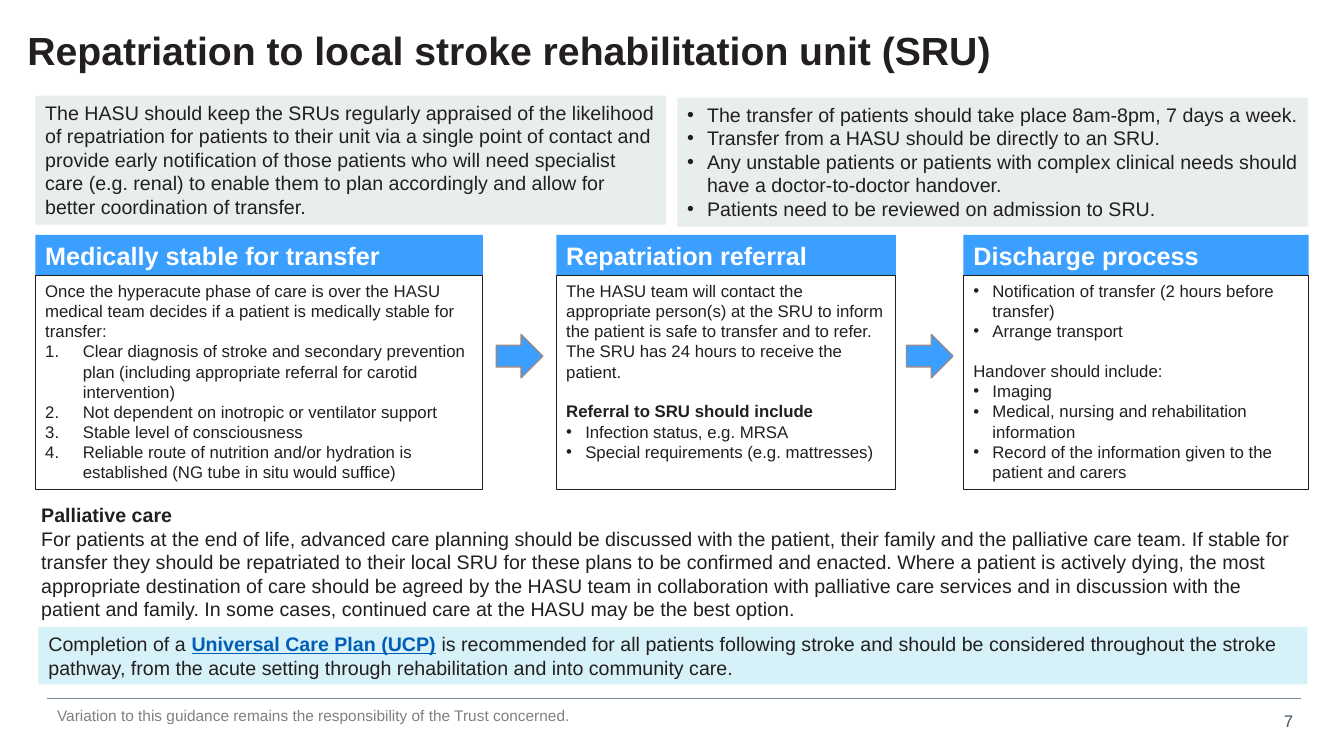
from dataclasses import dataclass

from lxml.etree import SubElement
from pptx import Presentation
from pptx.dml.color import RGBColor
from pptx.enum.shapes import MSO_CONNECTOR, MSO_SHAPE
from pptx.enum.text import MSO_ANCHOR, PP_ALIGN
from pptx.oxml.ns import qn
from pptx.util import Cm, Pt

COLORS = {
    "text": "231F20", "white": "FFFFFF", "blue": "3B9FFF", "outline": "97898D",
    "panel": "E8EDEE", "aqua": "D6F1F7", "link": "005EB8", "muted": "808080",
    "number": "425563", "rule": "768692",
}
BASE_FORMAT = {"name": "Arial", "size": 14, "bold": False, "color": "text"}
BULLET, NUMBER = "bullet", "number"


@dataclass
class Run:
    text: str
    format: dict


@dataclass
class Para:
    content: str | list[Run]
    marker: str = ""
    indent: float = 0.48
    bold: bool = False
    before: float = 0


@dataclass
class Block:
    left: float
    top: float
    width: float
    height: float
    paras: list[Para]
    format: dict
    fill: str = ""
    line: str = ""


@dataclass
class Stage:
    left: float
    width: float
    heading: str
    paras: list[Para]


def rgb(name: str) -> RGBColor:
    return RGBColor.from_string(COLORS[name])


def add_run(p, text: str, fmt: dict) -> None:
    r = p.add_run()
    r.text = text
    for key, value in fmt.items():
        if key == "color":
            r.font.color.rgb = rgb(value)
        else:
            setattr(r.font, key, Pt(value) if key == "size" else value)


def add_marker(p, marker: str, indent: float) -> None:
    """Give the paragraph a hanging bullet or number."""
    pPr = p._p.get_or_add_pPr()
    pPr.set("marL", str(Cm(indent)))
    pPr.set("indent", str(-Cm(indent)))
    SubElement(pPr, qn("a:buFont"), typeface="Arial")
    if marker == NUMBER:
        SubElement(pPr, qn("a:buAutoNum"), type="arabicPeriod")
    else:
        SubElement(pPr, qn("a:buChar"), char="•")


def style_shape(sp, fill: str, line: str, width: float = 0.75) -> None:
    sp.shadow.inherit = False
    if fill:
        sp.fill.solid()
        sp.fill.fore_color.rgb = rgb(fill)
    else:
        sp.fill.background()
    if line:
        sp.line.color.rgb = rgb(line)
        sp.line.width = Pt(width)
    else:
        sp.line.fill.background()


def add_block(s, block: Block):
    box = [Cm(v) for v in (block.left, block.top, block.width, block.height)]
    if block.fill or block.line:
        sp = s.shapes.add_shape(MSO_SHAPE.RECTANGLE, *box)
        style_shape(sp, block.fill, block.line)
    else:
        sp = s.shapes.add_textbox(*box)
    tf = sp.text_frame
    tf.word_wrap = True
    tf.vertical_anchor = MSO_ANCHOR.TOP
    for i, para in enumerate(block.paras):
        p = tf.add_paragraph() if i else tf.paragraphs[0]
        p.alignment = PP_ALIGN.LEFT
        if para.before:
            p.space_before = Pt(para.before)
        if para.marker:
            add_marker(p, para.marker, para.indent)
        fmt = BASE_FORMAT | block.format
        if para.bold:
            fmt["bold"] = True
        runs = [Run(para.content, {})] if isinstance(para.content, str) else para.content
        for run in runs:
            add_run(p, run.text, fmt | run.format)
    return sp


def add_arrow(s, center: float) -> None:
    width, height = 1.17, 1.09
    sp = s.shapes.add_shape(MSO_SHAPE.RIGHT_ARROW, Cm(center - width / 2), Cm(8.43),
                            Cm(width), Cm(height))
    style_shape(sp, "blue", "outline", 1)


def add_footer_rule(s) -> None:
    line = s.shapes.add_connector(MSO_CONNECTOR.STRAIGHT, Cm(1.19), Cm(17.6), Cm(32.79), Cm(17.6))
    line.line.color.rgb = rgb("rule")
    line.line.width = Pt(0.5)
    SubElement(line._element.spPr, qn("a:effectLst"))


def listed(marker: str, indent: float, *texts: str) -> list[Para]:
    return [Para(text, marker, indent) for text in texts]


TITLE = Block(0.69, 0.79, 31.67, 1.37,
              [Para("Repatriation to local stroke rehabilitation unit (SRU)")],
              {"size": 28, "bold": True})
PAGE_NUMBER = Block(31.8, 17.78, 1.04, 0.76, [Para("7")], {"size": 12, "color": "number"})

BLOCKS = [
    Block(0.89, 2.41, 15.9, 3.25, [Para(
        "The HASU should keep the SRUs regularly appraised of the likelihood of repatriation for "
        "patients to their unit via a single point of contact and provide early notification of "
        "those patients who will need specialist care (e.g. renal) to enable them to plan "
        "accordingly and allow for better coordination of transfer.")], {}, "panel"),
    Block(17.07, 2.46, 15.9, 3.25, listed(
        BULLET, 0.5,
        "The transfer of patients should take place 8am-8pm, 7 days a week.",
        "Transfer from a HASU should be directly to an SRU.",
        "Any unstable patients or patients with complex clinical needs should have a "
        "doctor-to-doctor handover.",
        "Patients need to be reviewed on admission to SRU."), {}, "panel"),
    Block(0.79, 12.55, 32.18, 3.25, [
        Para("Palliative care", bold=True),
        Para("For patients at the end of life, advanced care planning should be discussed with the "
             "patient, their family and the palliative care team. If stable for transfer they "
             "should be repatriated to their local SRU for these plans to be confirmed and enacted. "
             "Where a patient is actively dying, the most appropriate destination of care should be "
             "agreed by the HASU team in collaboration with palliative care services and in "
             "discussion with the patient and family. In some cases, continued care at the HASU may "
             "be the best option.")], {}),
    Block(0.97, 15.8, 31.98, 1.45, [Para([
        Run("Completion of a ", {}),
        Run("Universal Care Plan (UCP)", {"color": "link", "bold": True, "underline": True}),
        Run(" is recommended for all patients following stroke and should be considered throughout "
            "the stroke pathway, from the acute setting through rehabilitation and into community "
            "care.", {})])], {}, "aqua"),
    Block(1.19, 17.68, 14.91, 0.74, [Para(
        "Variation to this guidance remains the responsibility of the Trust concerned.")],
        {"size": 11, "color": "muted"}),
]

STAGES = [
    Stage(0.89, 11.28, "Medically stable for transfer", [
        Para("Once the hyperacute phase of care is over the HASU medical team decides if a patient "
             "is medically stable for transfer:"),
        *listed(NUMBER, 0.95,
                "Clear diagnosis of stroke and secondary prevention plan (including appropriate "
                "referral for carotid intervention)",
                "Not dependent on inotropic or ventilator support",
                "Stable level of consciousness",
                "Reliable route of nutrition and/or hydration is established (NG tube in situ would "
                "suffice)")]),
    Stage(14.02, 8.56, "Repatriation referral", [
        Para("The HASU team will contact the appropriate person(s) at the SRU to inform the patient "
             "is safe to transfer and to refer. The SRU has 24 hours to receive the patient."),
        Para("Referral to SRU should include", bold=True, before=14),
        *listed(BULLET, 0.48, "Infection status, e.g. MRSA",
                "Special requirements (e.g. mattresses)")]),
    Stage(24.28, 8.7, "Discharge process", [
        *listed(BULLET, 0.48, "Notification of transfer (2 hours before transfer)",
                "Arrange transport"),
        Para("Handover should include:", before=14),
        *listed(BULLET, 0.48, "Imaging", "Medical, nursing and rehabilitation information",
                "Record of the information given to the patient and carers")]),
]


def main() -> None:
    prs = Presentation()
    prs.slide_width, prs.slide_height = Cm(33.87), Cm(19.05)
    s = prs.slides.add_slide(prs.slide_layouts[6])

    tf = add_block(s, TITLE).text_frame
    for side in ("left", "top", "right", "bottom"):
        setattr(tf, f"margin_{side}", 0)
    tf.paragraphs[0].line_spacing = 0.9

    for block in BLOCKS:
        add_block(s, block)
    for stage in STAGES:
        add_block(s, Block(stage.left, 5.92, stage.width, 1.02, [Para(stage.heading)],
                           {"size": 18, "bold": True, "color": "white"}, "blue"))
        add_block(s, Block(stage.left, 6.95, stage.width, 5.38, stage.paras,
                           {"size": 12}, line="text"))
    for before, after in zip(STAGES, STAGES[1:]):
        add_arrow(s, (before.left + before.width + after.left) / 2)

    add_footer_rule(s)
    add_block(s, PAGE_NUMBER).text_frame.paragraphs[0].alignment = PP_ALIGN.RIGHT
    prs.save("out.pptx")


if __name__ == "__main__":
    main()
